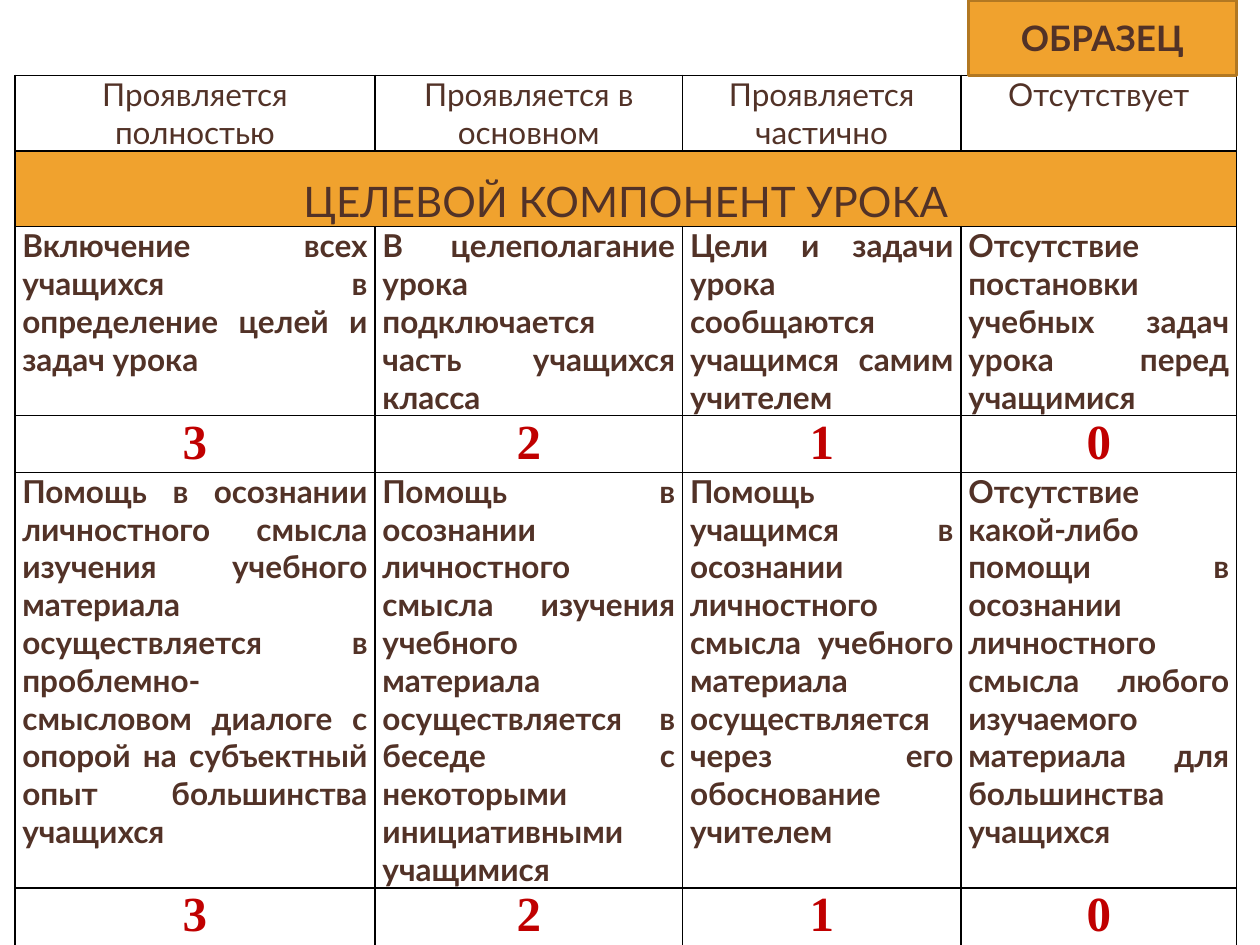
from lxml import etree
from pptx import Presentation
from pptx.dml.color import RGBColor
from pptx.enum import shapes, text
from pptx.oxml import ns
from pptx.util import Cm, Pt

BROWN, RED, ORANGE, OCHRE, WHITE, BLACK = "523227", "C00000", "F0A22E", "B27822", "FFFFFF", "000000"
CENTER, JUSTIFY = text.PP_ALIGN.CENTER, text.PP_ALIGN.JUSTIFY

STYLES = {
    "level": dict(size=18, align=CENTER),
    "section": dict(size=24, align=CENTER, spacing=1.5),
    "criterion": dict(size=18, bold=True, align=JUSTIFY),
    "score": dict(size=28, bold=True, align=CENTER, font="Times New Roman", color=RED),
    "badge": dict(size=20, bold=True, align=CENTER),
}
SCORES = ["3", "2", "1", "0"]
ROWS = [
    ("level", 1.47, ["Проявляется полностью", "Проявляется в основном",
                     "Проявляется частично", "Отсутствует"]),
    ("section", 1.27, ["ЦЕЛЕВОЙ КОМПОНЕНТ УРОКА"]),
    ("criterion", 3.63, [
        "Включение всех учащихся в определение целей и задач урока",
        "В целеполагание урока подключается часть учащихся класса",
        "Цели и задачи урока сообщаются учащимся самим учителем",
        "Отсутствие постановки учебных задач урока перед учащимися"]),
    ("score", 1.14, SCORES),
    ("criterion", 7.57, [
        "Помощь в осознании личностного смысла изучения учебного материала осуществляется "
        "в проблемно-смысловом диалоге с опорой на субъектный опыт большинства учащихся",
        "Помощь в осознании личностного смысла изучения учебного материала осуществляется "
        "в беседе с некоторыми инициативными учащимися",
        "Помощь учащимся в осознании личностного смысла учебного материала осуществляется "
        "через его обоснование учителем",
        "Отсутствие какой-либо помощи в осознании личностного смысла любого изучаемого "
        "материала для большинства учащихся"]),
    ("score", 1.85, SCORES),
]
COLUMNS = [7.26, 6.2, 5.61, 5.56]
LEFT, TOP = 0.3, 1.52
BADGE_WIDTH = 5.41


def rgb(value):
    return RGBColor.from_string(value)


def write(tf, content, size, align, bold=False, font="Lato", color=BROWN, spacing=1.0):
    p = tf.paragraphs[0]
    p.text = content
    p.alignment = align
    p.line_spacing = spacing
    p.font.size = Pt(size)
    p.font.bold = bold
    p.font.name = font
    p.font.color.rgb = rgb(color)


def format_cell(cell, fill):
    cell.margin_left = cell.margin_right = Cm(0.15)
    cell.margin_top = cell.margin_bottom = 0
    tcPr = cell._tc.get_or_add_tcPr()
    for side in ("lnL", "lnR", "lnT", "lnB"):
        ln = etree.SubElement(tcPr, ns.qn("a:" + side), w=str(Pt(1)))
        solid = etree.SubElement(ln, ns.qn("a:solidFill"))
        etree.SubElement(solid, ns.qn("a:srgbClr"), val=BLACK)
    cell.fill.solid()
    cell.fill.fore_color.rgb = rgb(fill)


def add_criteria_table(s):
    heights = [height for _, height, _ in ROWS]
    table = s.shapes.add_table(len(ROWS), len(COLUMNS), Cm(LEFT), Cm(TOP),
                               Cm(sum(COLUMNS)), Cm(sum(heights))).table
    for column, width in zip(table.columns, COLUMNS):
        column.width = Cm(width)
    for i, (style, height, contents) in enumerate(ROWS):
        table.rows[i].height = Cm(height)
        for cell in table.rows[i].cells:
            format_cell(cell, ORANGE if style == "section" else WHITE)
        if len(contents) == 1:
            table.cell(i, 0).merge(table.cell(i, len(COLUMNS) - 1))
        for j, content in enumerate(contents):
            write(table.cell(i, j).text_frame, content, **STYLES[style])


def add_badge(s):
    left = LEFT + sum(COLUMNS) - BADGE_WIDTH
    badge = s.shapes.add_shape(shapes.MSO_SHAPE.RECTANGLE, Cm(left), 0, Cm(BADGE_WIDTH), Cm(TOP))
    badge.shadow.inherit = False
    badge.fill.solid()
    badge.fill.fore_color.rgb = rgb(ORANGE)
    badge.line.color.rgb = rgb(OCHRE)
    badge.line.width = Pt(2)
    badge.text_frame.vertical_anchor = text.MSO_ANCHOR.MIDDLE
    write(badge.text_frame, "ОБРАЗЕЦ", **STYLES["badge"])


def main():
    prs = Presentation()
    prs.slide_width, prs.slide_height = Cm(25.4), Cm(19.05)
    s = prs.slides.add_slide(prs.slide_layouts[6])
    add_criteria_table(s)
    add_badge(s)
    prs.save("out.pptx")


if __name__ == "__main__":
    main()
